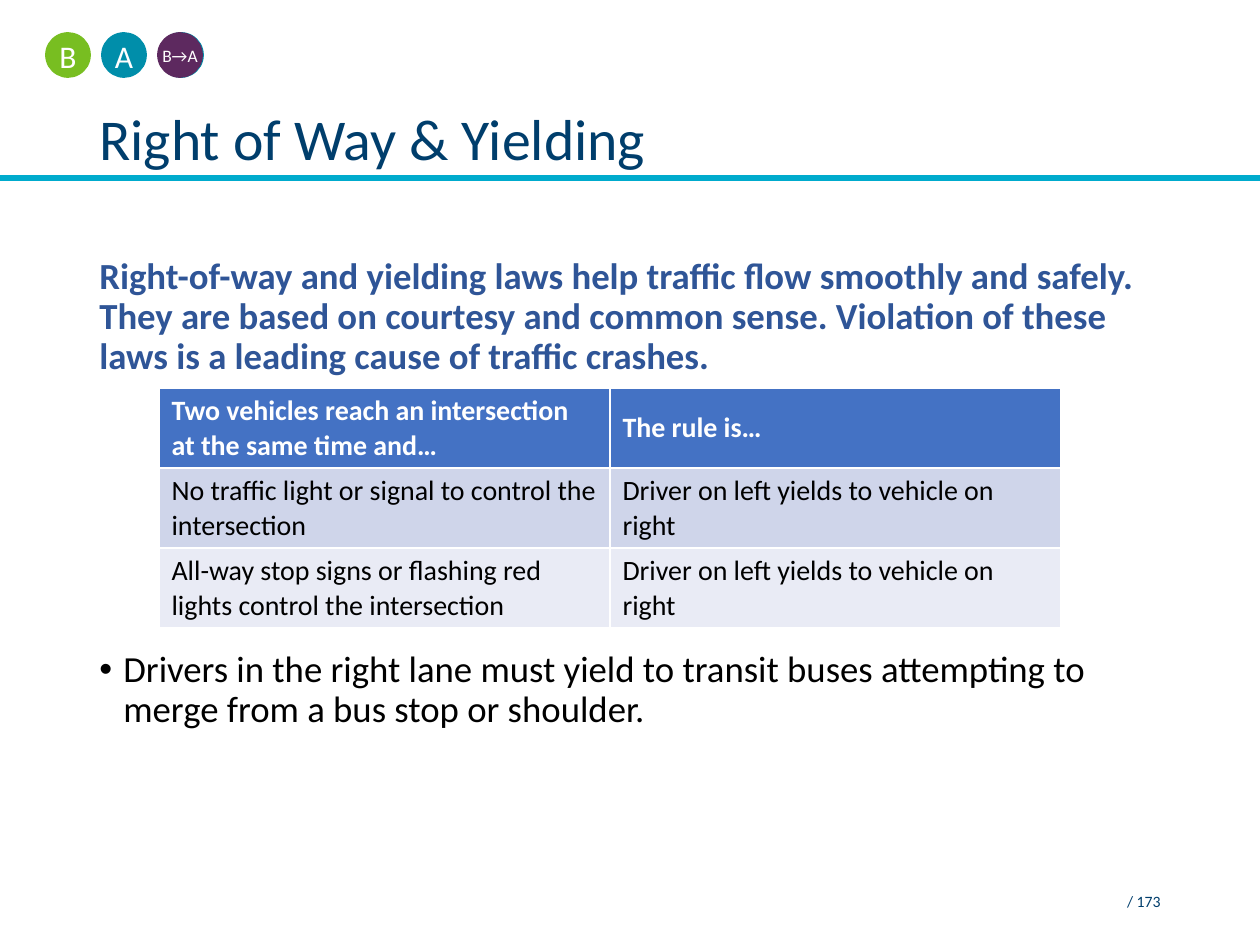
from lxml import etree
from pptx import Presentation
from pptx.dml.color import RGBColor
from pptx.enum.shapes import MSO_CONNECTOR, MSO_SHAPE
from pptx.enum.text import MSO_ANCHOR, PP_ALIGN
from pptx.oxml.ns import qn
from pptx.util import Pt

PX = 914400 // 126
STRAIGHT = MSO_CONNECTOR.STRAIGHT
OVAL = MSO_SHAPE.OVAL
TOP, MIDDLE = MSO_ANCHOR.TOP, MSO_ANCHOR.MIDDLE
LEFT, CENTER, RIGHT = PP_ALIGN.LEFT, PP_ALIGN.CENTER, PP_ALIGN.RIGHT

COLORS = {
    "navy": "003E6C",
    "rule": "00ABCD",
    "statement": "2F5597",
    "black": "000000",
    "white": "FFFFFF",
    "header": "4472C4",
    "band": "CFD5EA",
    "light_band": "E9EBF5",
    "green": "78BE21",
    "teal": "008EAA",
    "purple": "5D295F",
}


def rgb(name):
    return RGBColor.from_string(COLORS[name])


class SlideBuilder:
    font = "Calibri"

    def __init__(self, slide):
        self.slide = slide

    def style(self, paragraph, size, color, bold=False, align=LEFT):
        paragraph.alignment = align
        for run in paragraph.runs:
            run.font.name = self.font
            run.font.size = Pt(size)
            run.font.bold = bold
            run.font.color.rgb = rgb(color)

    def text(self, words, box, size, color, bold=False, align=LEFT,
             anchor=TOP, spacing=0.9, bullet_indent=0):
        frame = self.slide.shapes.add_textbox(*(n * PX for n in box)).text_frame
        frame.word_wrap = True
        frame.vertical_anchor = anchor
        frame.text = words
        paragraph = frame.paragraphs[0]
        paragraph.line_spacing = spacing
        if bullet_indent:
            properties = paragraph._p.get_or_add_pPr()
            properties.set("marL", str(bullet_indent * PX))
            properties.set("indent", str(-bullet_indent * PX))
            etree.SubElement(properties, qn("a:buFont"), typeface="Arial")
            etree.SubElement(properties, qn("a:buChar"), char="•")
        self.style(paragraph, size, color, bold, align)

    def line(self, x1, y1, x2, y2, color, width):
        rule = self.slide.shapes.add_connector(
            STRAIGHT, x1 * PX, y1 * PX, x2 * PX, y2 * PX)
        rule.line.color.rgb = rgb(color)
        rule.line.width = Pt(width)
        etree.SubElement(rule._element.spPr, qn("a:effectLst"))

    def badge(self, x, y, diameter, color, label="", size=18):
        badge = self.slide.shapes.add_shape(
            OVAL, x * PX, y * PX, diameter * PX, diameter * PX)
        badge.shadow.inherit = False
        badge.fill.solid()
        badge.fill.fore_color.rgb = rgb(color)
        badge.line.color.rgb = rgb(color)
        badge.line.width = Pt(1)
        if label:
            frame = badge.text_frame
            frame.margin_left = frame.margin_right = 0
            frame.margin_top = 2 * PX
            frame.margin_bottom = 0
            frame.word_wrap = False
            frame.vertical_anchor = MIDDLE
            frame.text = label
            self.style(frame.paragraphs[0], size, "white", align=CENTER)

    def table(self, rows, fills, x, y, column_width, row_height, size):
        columns = len(rows[0])
        table = self.slide.shapes.add_table(
            len(rows), columns, x * PX, y * PX,
            columns * column_width * PX, len(rows) * row_height * PX).table
        for r, (row, fill) in enumerate(zip(rows, fills)):
            for c, words in enumerate(row):
                cell = table.cell(r, c)
                cell.fill.solid()
                cell.fill.fore_color.rgb = rgb(fill)
                cell.vertical_anchor = MIDDLE
                cell.text = words
                self.style(cell.text_frame.paragraphs[0], size,
                           "black" if r else "white", bold=r == 0)


def main():
    deck = Presentation()
    deck.slide_width, deck.slide_height = 1260 * PX, 945 * PX
    page = SlideBuilder(deck.slides.add_slide(deck.slide_layouts[6]))

    page.line(0, 178, 1260, 178, "rule", 3)
    page.text("Right of Way & Yielding", (87, 50, 1086, 183), 33, "navy",
              anchor=MIDDLE)
    page.text("Right-of-way and yielding laws help traffic flow smoothly and "
              "safely. They are based on courtesy and common sense. Violation "
              "of these laws is a leading cause of traffic crashes.",
              (87, 252, 1086, 132), 21, "statement", bold=True)

    rules = [
        ("Two vehicles reach an intersection \vat the same time and…",
         "The rule is…"),
        ("No traffic light or signal to control the intersection",
         "Driver on left yields to vehicle on right"),
        ("All-way stop signs or flashing red lights control the intersection",
         "Driver on left yields to vehicle on right"),
    ]
    page.table(rules, ("header", "band", "light_band"), 159, 388, 451, 80, 16)

    page.text("Drivers in the right lane must yield to transit buses "
              "attempting to merge from a bus stop or shoulder.",
              (87, 645, 1086, 100), 21, "black", bullet_indent=24)
    page.text("/ 173", (890, 876, 283, 50), 9, "navy", align=RIGHT,
              anchor=MIDDLE, spacing=1.0)

    page.badge(159, 33, 44, "teal")
    badges = [("green", "B", 18), ("teal", "A", 18), ("purple", "B→A", 10)]
    for i, (color, label, size) in enumerate(badges):
        page.badge(46 + 56 * i, 33, 44, color, label, size)

    deck.save("out.pptx")


if __name__ == "__main__":
    main()
